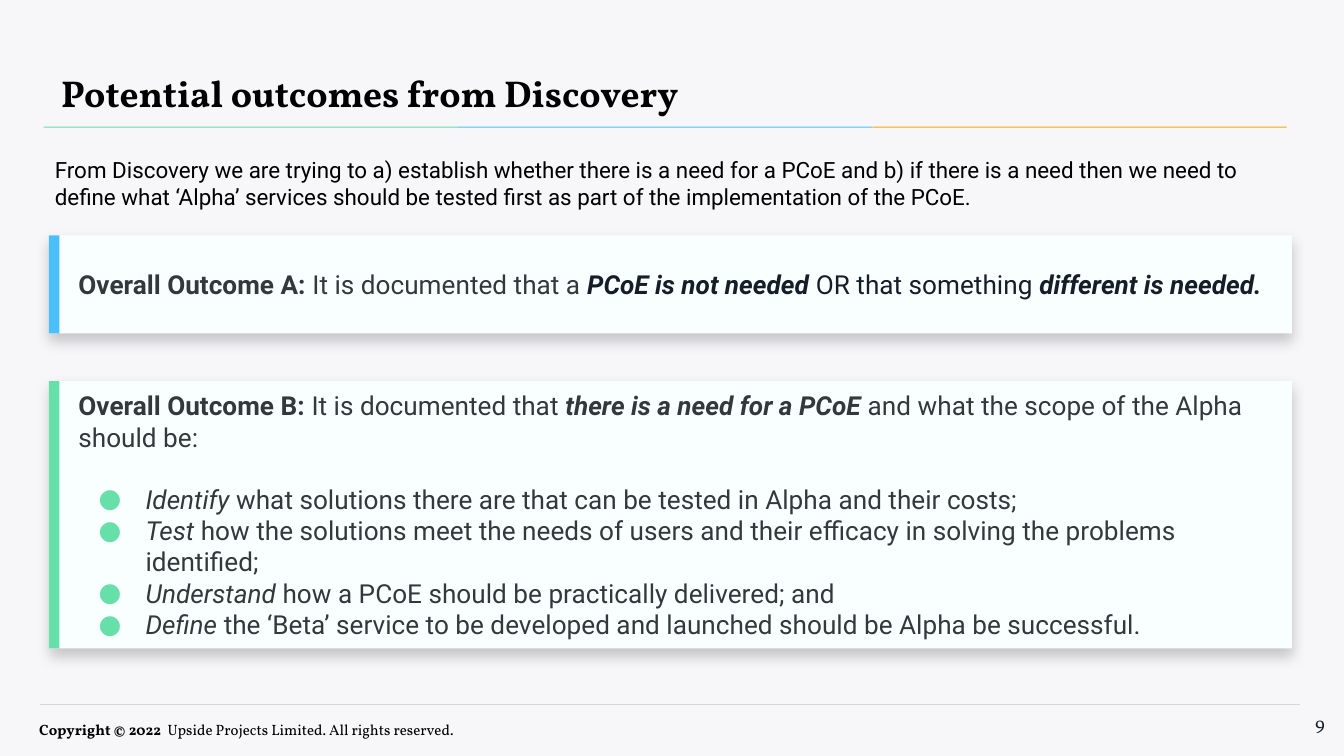
import pptx
import pptx.util
import pptx.dml.color
import pptx.enum.shapes
import pptx.enum.text
import pptx.oxml
import pptx.oxml.ns

WIDE = 10
HIGH = WIDE * 9 / 16
COLS = 100
CELL = WIDE / COLS
SERIF, SANS = "Vollkorn", "Roboto"
BLACK, GREY, NAVY = "000000", "35383A", "151E28"
GREEN, BLUE, GOLD = "66DFA9", "49C0F9", "F8A700"
PALE, RULE, BACK = "F9FFFF", "D4D8D8", "F7F7F9"
RECT = pptx.enum.shapes.MSO_SHAPE.RECTANGLE
MIDDLE = pptx.enum.text.MSO_ANCHOR.MIDDLE
LEFT = pptx.enum.text.PP_ALIGN.LEFT
RIGHT = pptx.enum.text.PP_ALIGN.RIGHT
GROW = pptx.enum.text.MSO_AUTO_SIZE.SHAPE_TO_FIT_TEXT


def hue(code):
    return pptx.dml.color.RGBColor.from_string(code)


def grid(*cells):
    return [pptx.util.Inches(cell * CELL) for cell in cells]


def put(item, values):
    for name, value in values.items():
        setattr(item, name, value)


def node(parent, xml):
    space = pptx.oxml.ns.nsdecls("a")
    parent.append(pptx.oxml.parse_xml(xml.replace(" ", f" {space} ", 1)))


def block(shapes, area, fill):
    shape = shapes.add_shape(RECT, *grid(*area))
    shape.shadow.inherit = False
    shape.fill.solid()
    shape.fill.fore_color.rgb = hue(fill)
    shape.line.fill.background()
    return shape


def frame(shape, pads, **extra):
    names = ("margin_left", "margin_top", "margin_right", "margin_bottom")
    put(shape.text_frame, dict(zip(names, grid(*pads)), word_wrap=True, **extra))
    return shape.text_frame


def write(para, runs, face, size, tint, **form):
    put(para, form)
    for text, style, *other in runs:
        run = para.add_run()
        run.text = text
        put(run.font, {"name": face, "size": pptx.util.Pt(size),
                       "bold": "b" in style, "italic": "i" in style})
        run.font.color.rgb = hue(other[0] if other else tint)


def label(shapes, area, pads, runs, face, size, tint, extra=None, **form):
    text = frame(shapes.add_textbox(*grid(*area)), pads, **(extra or {}))
    write(text.paragraphs[0], runs, face, size, tint, **form)


def bullet(para, tint):
    props = para._p.get_or_add_pPr()
    left, hang = grid(5, -3.5)
    props.set("marL", str(left))
    props.set("indent", str(hang))
    node(props, f'<a:buClr ><a:srgbClr val="{tint}"/></a:buClr>')
    node(props, f'<a:buFont typeface="{SANS}"/>')
    node(props, '<a:buChar char="●"/>')


def card(shapes, row, tall, tint, lead, points=()):
    shape = block(shapes, (3.63, row, 92.5, tall), PALE)
    props = shape._element.spPr
    props.remove(props.find(pptx.oxml.ns.qn("a:effectLst")))
    blur, dist = pptx.util.Pt(6.8), pptx.util.Pt(3.8)
    node(props, f'<a:effectLst ><a:outerShdw blurRad="{blur}" dist="{dist}" '
         'dir="5400000" algn="t" rotWithShape="0"><a:srgbClr val="000000">'
         '<a:alpha val="20000"/></a:srgbClr></a:outerShdw></a:effectLst>')
    text = frame(shape, (2.2, 1, 1, 1), vertical_anchor=MIDDLE)
    write(text.paragraphs[0], lead, SANS, 14, GREY, alignment=LEFT)
    for spot, (verb, rest) in enumerate(points):
        para = text.add_paragraph()
        bullet(para, tint)
        gap = pptx.util.Pt(0 if spot else 16.5)
        write(para, [(verb, "i"), (rest, "")], SANS, 14, GREY,
              alignment=LEFT, space_before=gap)
    block(shapes, (3.63, row, 0.8, tall), tint)


def rule(shapes, left, right, row):
    kind = pptx.enum.shapes.MSO_CONNECTOR.STRAIGHT
    line = shapes.add_connector(kind, *grid(left, row, right, row))
    line.line.color.rgb = hue(RULE)
    line.line.width = pptx.util.Pt(0.75)
    node(line._element.spPr, "<a:effectLst />")


def main():
    deck = pptx.Presentation()
    put(deck, {"slide_width": pptx.util.Inches(WIDE),
               "slide_height": pptx.util.Inches(HIGH)})
    slide = deck.slides.add_slide(deck.slide_layouts[6])
    slide.background.fill.solid()
    slide.background.fill.fore_color.rgb = hue(BACK)
    shapes = slide.shapes

    rule(shapes, 3, 96.7, 52.42)
    label(shapes, (1.93, 52.9, 60.2, 2.4), (1, 0.5, 1, 0.5),
          [("Copyright © 2022  ", "b"),
           ("Upside Projects Limited. All rights reserved.", "")],
          SERIF, 8, BLACK, line_spacing=1.2)
    label(shapes, (4.15, 4.85, 73.3, 3.8), (0.4,) * 4,
          [("Potential outcomes from Discovery", "b")], SERIF, 20, BLACK)

    strip = shapes.add_group_shape().shapes
    for spot, tint in enumerate((GREEN, BLUE, GOLD)):
        block(strip, (3.24 + spot * 30.83, 9.42, 30.83, 0.08), tint)

    label(shapes, (3.1, 11.15, 94.4, 5), (1, 0.5, 1, 0.5),
          [("From Discovery we are trying to a) establish whether there is a "
            "need for a PCoE and b) if there is a need then we need to define "
            "what ‘Alpha’ services should be tested first as part of the "
            "implementation of the PCoE.", "")],
          SANS, 12, BLACK, {"auto_size": GROW})

    card(shapes, 17.52, 7.3, BLUE,
         [("Overall Outcome A: ", "b"), ("It is documented that a ", ""),
          ("PCoE is not needed", "bi", NAVY),
          (" OR that something ", "", NAVY),
          ("different is needed.", "bi", NAVY)])
    card(shapes, 28.35, 19.9, GREEN,
         [("Overall Outcome B: ", "b"), ("It is documented that ", ""),
          ("there is a need for a PCoE", "bi"),
          (" and what the scope of the Alpha should be:", "")],
         [("Identify", " what solutions there are that can be tested in Alpha "
           "and their costs;"),
          ("Test", " how the solutions meet the needs of users and their "
           "efficacy in solving the problems identified;"),
          ("Understand ", "how a PCoE should be practically delivered; and"),
          ("Define ", "the ‘Beta’ service to be developed and launched should "
           "be Alpha be successful.")])

    label(shapes, (93.55, 52.1, 6, 4.3), (1,) * 4, [("9", "")],
          SERIF, 10, NAVY, alignment=RIGHT)
    deck.save("out.pptx")


if __name__ == "__main__":
    main()
